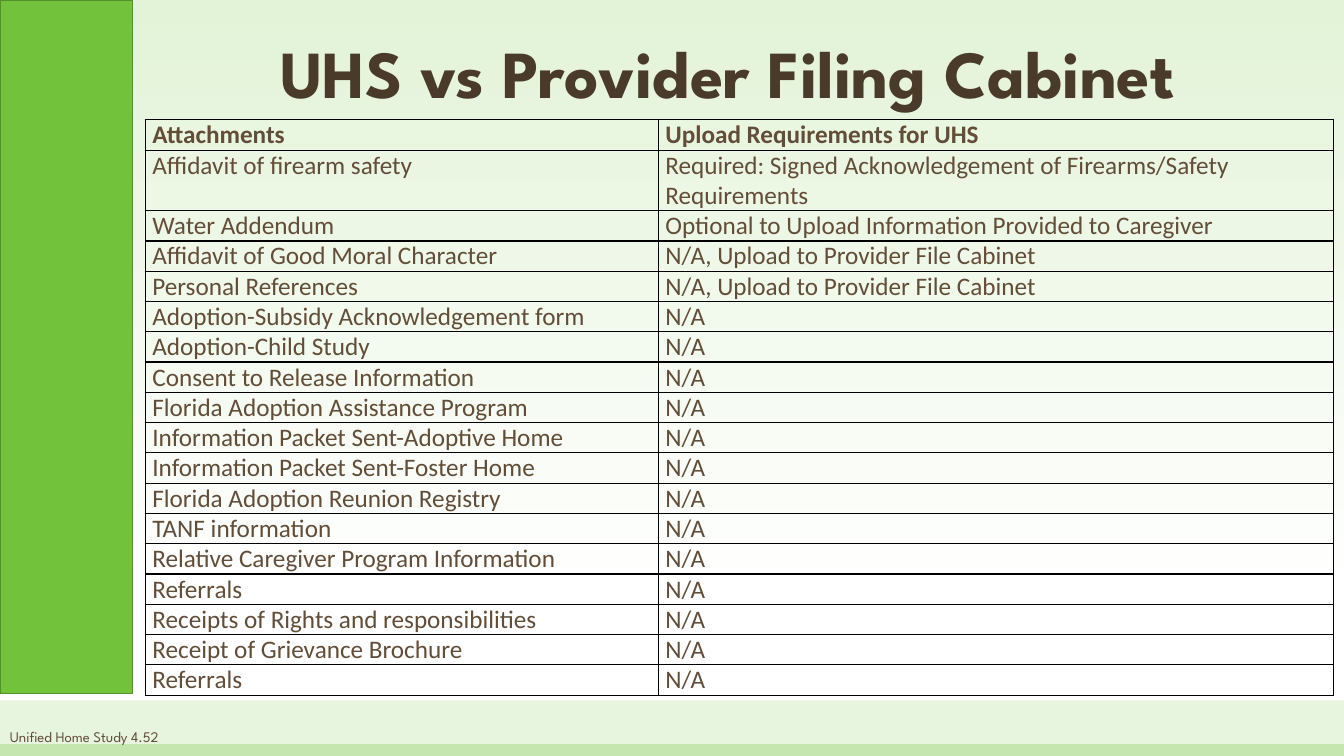
from dataclasses import dataclass

from lxml.etree import SubElement
from pptx import Presentation
from pptx.dml.color import RGBColor as Color
from pptx.enum.shapes import MSO_SHAPE as Shape
from pptx.enum.text import MSO_ANCHOR as Anchor, PP_ALIGN as Align
from pptx.oxml.ns import qn
from pptx.util import Cm, Pt


@dataclass(frozen=True)
class Theme:
    green: Color = Color.from_string("72C23C")
    dark_green: Color = Color.from_string("54902C")
    pale_green: Color = Color.from_string("E3F3D8")
    white: Color = Color.from_string("FFFFFF")
    title_brown: Color = Color.from_string("4A3A2A")
    text_brown: Color = Color.from_string("624D38")
    border: str = "000000"
    heading_font: str = "League Spartan"
    table_font: str = "Calibri"
    title_size: Pt = Pt(48)
    table_size: Pt = Pt(18)
    footer_size: Pt = Pt(10.5)


THEME = Theme()
SLIDE_WIDTH, SLIDE_HEIGHT = Cm(33.87), Cm(19.05)
COLUMN_WIDTHS = (Cm(12.93), Cm(17.02))
ROW_HEIGHT = Cm(0.69)
CELL_MARGIN = Cm(0.18)
NOT_NEEDED = "N/A"
CABINET = "N/A, Upload to Provider File Cabinet"

ROWS = [
    ("Attachments", "Upload Requirements for UHS"),
    ("Affidavit of firearm safety",
     "Required: Signed Acknowledgement of Firearms/Safety Requirements"),
    ("Water Addendum", "Optional to Upload Information Provided to Caregiver"),
    ("Affidavit of Good Moral Character", CABINET),
    ("Personal References", CABINET),
] + [(attachment, NOT_NEEDED) for attachment in (
    "Adoption-Subsidy Acknowledgement form",
    "Adoption-Child Study",
    "Consent to Release Information",
    "Florida Adoption Assistance Program",
    "Information Packet Sent-Adoptive Home",
    "Information Packet Sent-Foster Home",
    "Florida Adoption Reunion Registry",
    "TANF information",
    "Relative Caregiver Program Information",
    "Referrals",
    "Receipts of Rights and responsibilities",
    "Receipt of Grievance Brochure",
    "Referrals",
)]


def style_text(paragraph, font_name, size, color, bold=False):
    font = paragraph.font
    font.name, font.size, font.bold = font_name, size, bold
    font.color.rgb = color


def set_background(slide):
    fill = slide.background.fill
    fill.gradient()
    fill.gradient_angle = 270
    stops = ((0, THEME.pale_green), (0.79, THEME.white))
    for stop, (position, color) in zip(fill.gradient_stops, stops):
        stop.position = position
        stop.color.rgb = color


def set_title(slide, text):
    title = slide.shapes.title
    title.left, title.top = Cm(5.13), Cm(-0.05)
    title.width, title.height = Cm(26.42), Cm(3.02)
    title.text_frame.text = text
    title.text_frame.vertical_anchor = Anchor.BOTTOM
    paragraph = title.text_frame.paragraphs[0]
    paragraph.alignment = Align.CENTER
    paragraph.line_spacing = 0.9
    style_text(paragraph, THEME.heading_font, THEME.title_size,
               THEME.title_brown, bold=True)


def add_bar(slide, top, width, height, opacity=100, outline=None):
    bar = slide.shapes.add_shape(Shape.RECTANGLE, 0, top, width, height)
    bar.shadow.inherit = False
    bar.fill.solid()
    bar.fill.fore_color.rgb = THEME.green
    if opacity < 100:
        color = bar.fill._xPr.find(".//" + qn("a:srgbClr"))
        SubElement(color, qn("a:alpha"), val=str(opacity * 1000))
    if outline is None:
        bar.line.fill.background()
    else:
        bar.line.color.rgb = outline
        bar.line.width = Pt(1)


def add_footer(slide, text):
    box = slide.shapes.add_textbox(0, Cm(18.21), Cm(7.59), Cm(0.84))
    box.text_frame.word_wrap = True
    box.text_frame.text = text
    style_text(box.text_frame.paragraphs[0], THEME.heading_font,
               THEME.footer_size, THEME.text_brown)


def add_borders(cell):
    properties = cell._tc.get_or_add_tcPr()
    for side in ("a:lnL", "a:lnR", "a:lnT", "a:lnB"):
        line = SubElement(properties, qn(side), w=str(Pt(1)))
        fill = SubElement(line, qn("a:solidFill"))
        SubElement(fill, qn("a:srgbClr"), val=THEME.border)


def fill_cell(cell, text, bold):
    cell.text = text
    cell.margin_left = cell.margin_right = CELL_MARGIN
    cell.margin_top = cell.margin_bottom = 0
    add_borders(cell)
    cell.fill.background()
    style_text(cell.text_frame.paragraphs[0], THEME.table_font,
               THEME.table_size, THEME.text_brown, bold)


def add_requirements_table(slide):
    frame = slide.shapes.add_table(
        len(ROWS), len(COLUMN_WIDTHS), Cm(3.66), Cm(3.02),
        sum(COLUMN_WIDTHS), ROW_HEIGHT * (len(ROWS) + 1))
    table = frame.table
    table.first_row = table.horz_banding = False
    for column, width in zip(table.columns, COLUMN_WIDTHS):
        column.width = width
    for row_index, texts in enumerate(ROWS):
        table.rows[row_index].height = ROW_HEIGHT * (2 if row_index == 1 else 1)
        for column_index, text in enumerate(texts):
            fill_cell(table.cell(row_index, column_index), text, row_index == 0)


def main():
    presentation = Presentation()
    presentation.slide_width = SLIDE_WIDTH
    presentation.slide_height = SLIDE_HEIGHT
    slide = presentation.slides.add_slide(presentation.slide_layouts[5])
    set_background(slide)
    add_bar(slide, Cm(17.65), SLIDE_WIDTH, Cm(1.4), opacity=17)
    add_bar(slide, Cm(18.75), SLIDE_WIDTH, Cm(0.3), opacity=28)
    set_title(slide, "UHS vs Provider Filing Cabinet")
    add_footer(slide, "Unified Home Study 4.52")
    add_bar(slide, 0, Cm(3.34), Cm(17.48), outline=THEME.dark_green)
    add_requirements_table(slide)
    presentation.save("out.pptx")


if __name__ == "__main__":
    main()
